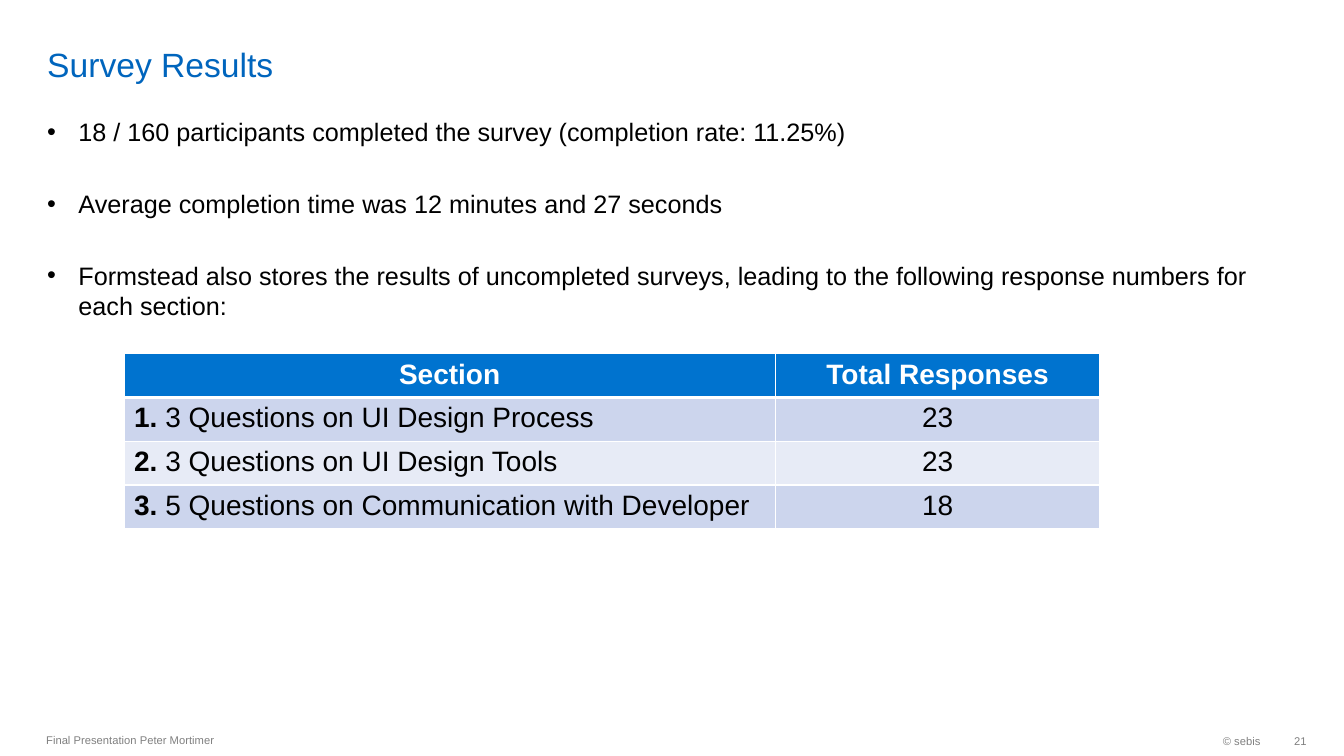
from lxml import etree
from pptx import Presentation
from pptx.dml.color import RGBColor
from pptx.enum.text import MSO_ANCHOR, PP_ALIGN
from pptx.oxml.ns import qn
from pptx.util import Pt

PX = 9144
BLUE = RGBColor(0x00, 0x65, 0xBD)
HEADER_BLUE = RGBColor(0x00, 0x73, 0xCF)
BAND_DARK = RGBColor(0xCC, 0xD5, 0xED)
BAND_LIGHT = RGBColor(0xE7, 0xEB, 0xF6)
BLACK = RGBColor(0x00, 0x00, 0x00)
GRAY = RGBColor(0x80, 0x80, 0x80)
WHITE = RGBColor(0xFF, 0xFF, 0xFF)
LEFT, CENTER, RIGHT = PP_ALIGN.LEFT, PP_ALIGN.CENTER, PP_ALIGN.RIGHT
TOP, MIDDLE, BOTTOM = MSO_ANCHOR.TOP, MSO_ANCHOR.MIDDLE, MSO_ANCHOR.BOTTOM

FINDINGS = [
    "18 / 160 participants completed the survey (completion rate: 11.25%)",
    "Average completion time was 12 minutes and 27 seconds",
    "Formstead also stores the results of uncompleted surveys, leading to "
    "the following response numbers for each section:",
]
HEADINGS = ["Section", "Total Responses"]
SECTIONS = [
    ("3 Questions on UI Design Process", 23),
    ("3 Questions on UI Design Tools", 23),
    ("5 Questions on Communication with Developer", 18),
]


class SlideWriter:
    """Adds styled elements to one slide, with lengths in px."""

    def __init__(self, slide, font_name):
        self.slide = slide
        self.font_name = font_name

    def apply(self, target, values):
        for name, value in values.items():
            setattr(target, name, value)

    def run(self, paragraph, words, size, color, bold=False):
        font = paragraph.add_run()
        font.text = words
        font = font.font
        self.apply(font, {"name": self.font_name, "size": Pt(size), "bold": bold})
        font.color.rgb = color

    def text(self, box, lines, size, color, align=LEFT, anchor=TOP,
             insets=(10, 5, 10, 5), bullet_indent=0, gap=0):
        frame = self.slide.shapes.add_textbox(*(n * PX for n in box)).text_frame
        left, top, right, bottom = (n * PX for n in insets)
        self.apply(frame, {
            "word_wrap": True, "vertical_anchor": anchor,
            "margin_left": left, "margin_top": top,
            "margin_right": right, "margin_bottom": bottom,
        })
        for index, line in enumerate(lines):
            paragraph = frame.add_paragraph() if index else frame.paragraphs[0]
            if bullet_indent:
                self.bullet(paragraph, bullet_indent)
            self.apply(paragraph, {"alignment": align, "space_before": Pt(gap if index else 0)})
            self.run(paragraph, line, size, color)

    def bullet(self, paragraph, indent):
        properties = paragraph._p.get_or_add_pPr()
        properties.set("marL", str(indent * PX))
        properties.set("indent", str(-indent * PX))
        etree.SubElement(properties, qn("a:buFont"), typeface=self.font_name)
        etree.SubElement(properties, qn("a:buChar"), char="•")

    def borders(self, cell, color, widths):
        properties = cell._tc.get_or_add_tcPr()
        for side, width in widths.items():
            line = etree.SubElement(properties, qn(f"a:ln{side}"), w=str(Pt(width)))
            fill = etree.SubElement(line, qn("a:solidFill"))
            etree.SubElement(fill, qn("a:srgbClr"), val=str(color))

    def table(self, box, column_widths, row_height, rows, size):
        table = self.slide.shapes.add_table(
            len(rows), len(column_widths), *(n * PX for n in box)).table
        for column, width in zip(table.columns, column_widths):
            column.width = width * PX
        for row_index, contents in enumerate(rows):
            table.rows[row_index].height = row_height * PX
            is_header = row_index == 0
            band = BAND_DARK if row_index % 2 else BAND_LIGHT
            for column_index, runs in enumerate(contents):
                cell = table.cell(row_index, column_index)
                self.borders(cell, WHITE, {
                    "L": 1, "R": 1,
                    "T": 3 if row_index == 1 else 1,
                    "B": 3 if is_header else 1,
                })
                cell.fill.solid()
                cell.fill.fore_color.rgb = HEADER_BLUE if is_header else band
                paragraph = cell.text_frame.paragraphs[0]
                paragraph.alignment = CENTER if is_header or column_index else LEFT
                for words, bold in runs:
                    self.run(paragraph, words, size, WHITE if is_header else BLACK, bold)


def main():
    presentation = Presentation()
    presentation.slide_width = 1333 * PX
    presentation.slide_height = 750 * PX
    slide = presentation.slides.add_slide(presentation.slide_layouts[6])
    writer = SlideWriter(slide, "Arial")

    writer.text((37, 5, 1158, 79), ["Survey Results"], 24, BLUE,
                anchor=BOTTOM, insets=(10, 0, 10, 0))
    writer.text((37, 111, 1260, 587), FINDINGS, 18, BLACK, bullet_indent=31, gap=29.5)

    rows = [[[(heading, True)] for heading in HEADINGS]]
    for number, (section, responses) in enumerate(SECTIONS, 1):
        rows.append([[(f"{number}.", True), (f" {section}", False)],
                     [(str(responses), False)]])
    writer.table((123, 351, 968, 164), (646, 322), 41, rows, 20)

    writer.text((36, 718, 630, 32), ["Final Presentation Peter Mortimer"], 8, GRAY, anchor=MIDDLE)
    writer.text((1026, 719, 234, 32), ["© sebis"], 8, GRAY, RIGHT, MIDDLE)
    writer.text((1260, 719, 36, 32), ["21"], 8, GRAY, RIGHT, MIDDLE, (10, 5, 0, 5))
    presentation.save("out.pptx")


if __name__ == "__main__":
    main()
